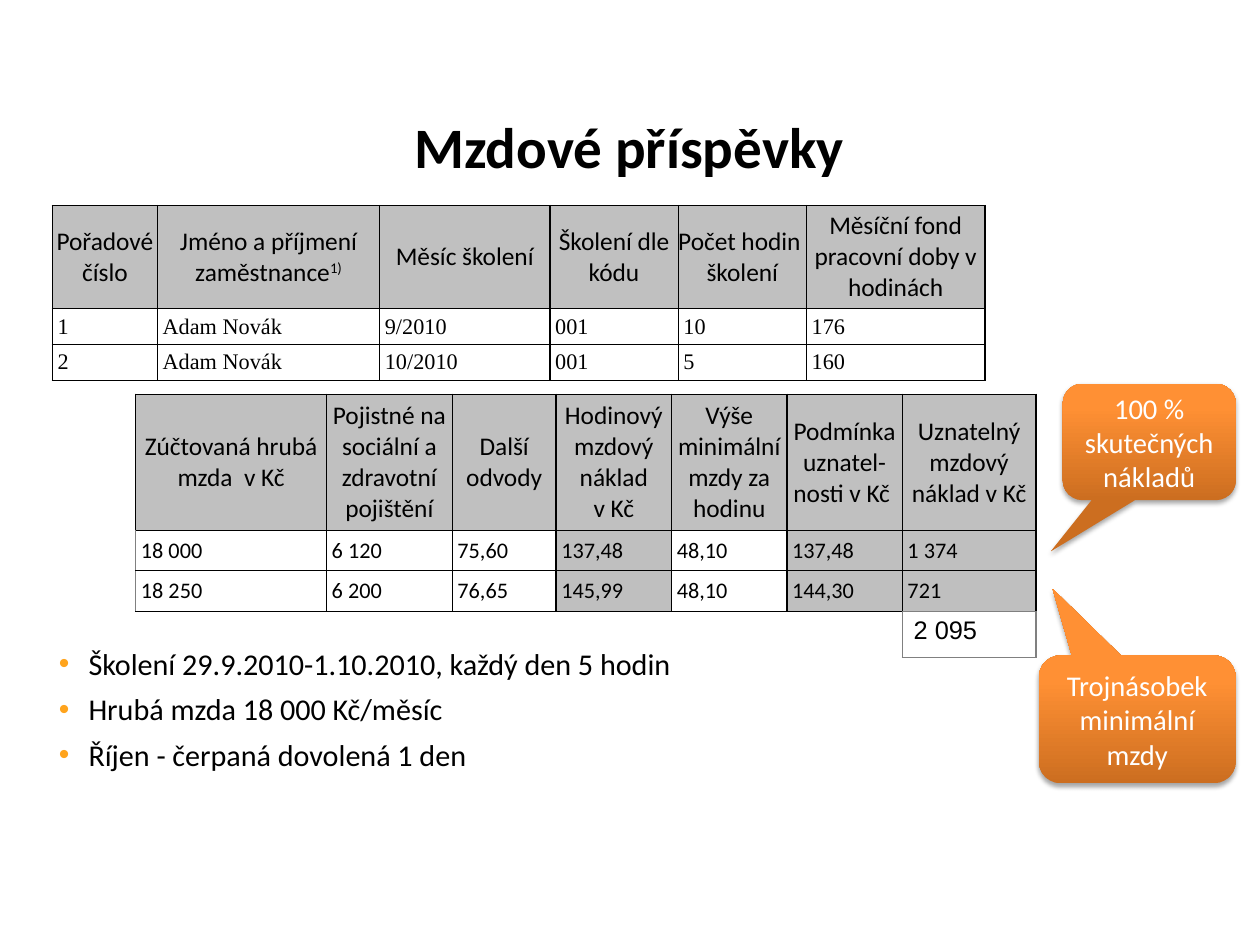
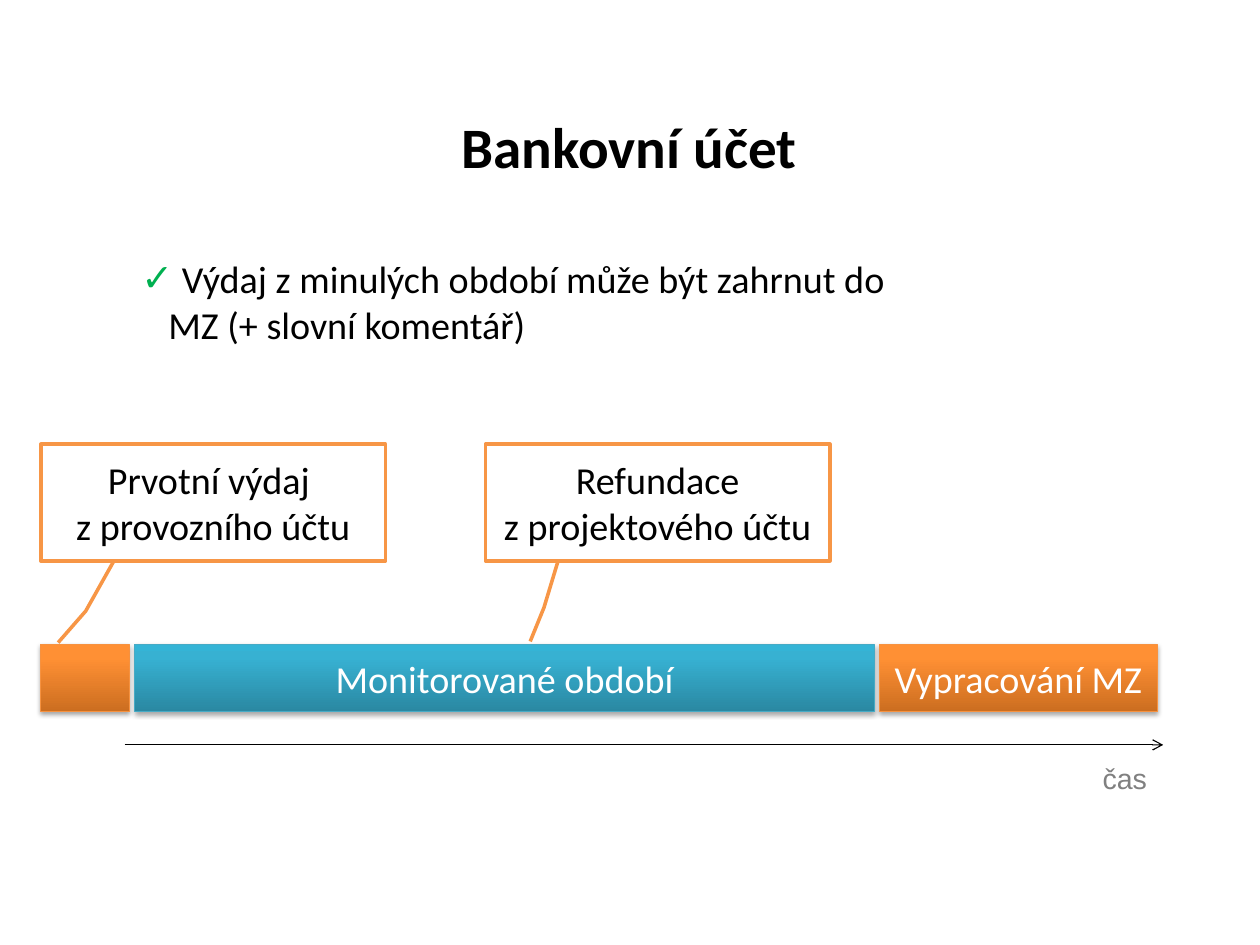
from copy import deepcopy
from lxml import etree
from pptx import Presentation
from pptx.dml.color import RGBColor
from pptx.enum.shapes import MSO_CONNECTOR, MSO_SHAPE
from pptx.enum.text import MSO_ANCHOR as ANCHOR, PP_ALIGN as ALIGN
from pptx.oxml.ns import qn
from pptx.util import Pt

BLACK = RGBColor(0x00, 0x00, 0x00)
WHITE = RGBColor(0xFF, 0xFF, 0xFF)
GRAY = RGBColor(0x80, 0x80, 0x80)
HEAD_GRAY = RGBColor(0xC0, 0xC0, 0xC0)
CELL_GRAY = RGBColor(0xBF, 0xBF, 0xBF)
AMBER = RGBColor(0xFF, 0xA4, 0x1D)
GREEN = RGBColor(0x00, 0xB0, 0x50)
ORANGE = RGBColor(0xF7, 0x96, 0x46)
ORANGE_EDGE = RGBColor(0xF6, 0x92, 0x40)
TEAL_EDGE = RGBColor(0x46, 0xAA, 0xC5)
ORANGE_GLOSS = [RGBColor(0xCC, 0x6E, 0x20), RGBColor(0xFF, 0x90, 0x34), RGBColor(0xFF, 0x91, 0x36)]
TEAL_GLOSS = [RGBColor(0x2A, 0x88, 0xA2), RGBColor(0x37, 0xB1, 0xD2), RGBColor(0x34, 0xB4, 0xD6)]


def write(frame, lines, size, color=BLACK, font="Calibri", align=ALIGN.LEFT,
          bold=False, after=0, bullet=None):
    frame.word_wrap = True
    look = {"size": Pt(size), "name": font, "bold": bold}
    for index, line in enumerate(lines):
        para = frame.paragraphs[0] if index == 0 else frame.add_paragraph()
        para.text = line
        if bullet:
            symbol, tint, margin, hang = bullet
            props = para._p.get_or_add_pPr()
            props.set("marL", str(Pt(margin)))
            props.set("indent", str(-Pt(hang)))
            paint = etree.SubElement(props, qn("a:buClr"))
            etree.SubElement(paint, qn("a:srgbClr"), val=str(tint))
            etree.SubElement(props, qn("a:buFont"), typeface="Arial")
            etree.SubElement(props, qn("a:buChar"), char=symbol)
        para.alignment = align
        para.space_after = Pt(after)
        for span in para.runs:
            for name, value in look.items():
                setattr(span.font, name, value)
            span.font.color.rgb = color


def gloss(shape, colors):
    shape.fill.gradient()
    shape.fill.gradient_angle = 90
    props = shape._element.spPr
    stops = props.find(qn("a:gradFill")).find(qn("a:gsLst"))
    stops.append(deepcopy(stops[-1]))
    for stop, color, place in zip(shape.fill.gradient_stops, colors, (0, 0.8, 1)):
        stop.color.rgb = color
        stop.position = place
    shape.shadow.inherit = False
    shade = etree.SubElement(props.find(qn("a:effectLst")), qn("a:outerShdw"),
                             blurRad=str(Pt(3.1)), dist=str(Pt(1.8)),
                             dir="5400000", rotWithShape="0")
    tint = etree.SubElement(shade, qn("a:srgbClr"), val=str(BLACK))
    etree.SubElement(tint, qn("a:alpha"), val="35000")


deck = Presentation()
deck.slide_width = Pt(793.75)
deck.slide_height = Pt(595.25)

pages = []
for title in ("Mzdové příspěvky", "Bankovní účet"):
    page = deck.slides.add_slide(deck.slide_layouts[6])
    box = page.shapes.add_textbox(Pt(53.8), Pt(66.7), Pt(685), Pt(72))
    write(box.text_frame, [title], 36, align=ALIGN.CENTER, bold=True)
    pages.append(page)
wages, account = pages

HEADING = {"size": 16, "align": ALIGN.CENTER}
tables = [
    {"at": (33, 129.4), "widths": [66.2, 140, 107.3, 80.8, 80.8, 112.4],
     "heights": [65, 22.6, 22.6],
     "line": BLACK, "edge": BLACK, "fill": HEAD_GRAY, "gray": (), "pad": (0, 0),
     "anchor": ANCHOR.MIDDLE, "head": HEADING,
     "body": {"size": 14, "font": "Times New Roman"},
     "rows": [["Pořadové číslo", "Jméno a příjmení zaměstnance", "Měsíc školení",
               "Školení dle kódu", "Počet hodin  školení",
               "Měsíční fond pracovní doby v hodinách"],
              ["1", "Adam Novák", "9/2010", "001", "10", "176"],
              ["2", "Adam Novák", "10/2010", "001", "5", "160"]]},
    {"at": (85.5, 248.4), "widths": [120.2, 79.2, 65.5, 72.7, 72.7, 72.7, 84.2],
     "heights": [85.7, 25.5, 25.5],
     "line": BLACK, "edge": GRAY, "fill": HEAD_GRAY, "gray": (3, 5, 6), "pad": (0, 0),
     "anchor": ANCHOR.MIDDLE, "head": HEADING, "body": {"size": 14},
     "rows": [["Zúčtovaná hrubá mzda  v Kč", "Pojistné na sociální a zdravotní pojištění",
               "Další odvody", "Hodinový mzdový náklad\vv Kč",
               "Výše minimální mzdy za hodinu", "Podmínka uznatel-\vnosti v Kč ",
               "Uznatelný mzdový náklad v Kč"],
              ["18 000", "6 120", "75,60", "137,48", "48,10", "137,48", "1 374"],
              ["18 250", "6 200", "76,65", "145,99", "48,10", "144,30", "721"]]},
    {"at": (568.4, 385), "widths": [84.2], "heights": [29.3],
     "line": GRAY, "edge": GRAY, "fill": WHITE, "gray": (), "pad": (7.2, 3.6),
     "anchor": ANCHOR.TOP, "head": {"size": 16, "font": "Arial"},
     "body": {}, "rows": [["2 095"]]},
]
grids = []
for plan in tables:
    left, top = plan["at"]
    widths, heights = plan["widths"], plan["heights"]
    grid = wages.shapes.add_table(len(heights), len(widths), Pt(left), Pt(top),
                                  Pt(sum(widths)), Pt(sum(heights))).table
    grid.first_row = grid.horz_banding = False
    for column, width in zip(grid.columns, widths):
        column.width = Pt(width)
    for r, texts in enumerate(plan["rows"]):
        grid.rows[r].height = Pt(heights[r])
        for c, text in enumerate(texts):
            cell = grid.cell(r, c)
            side, upright = plan["pad"]
            margins = {"left": 3.3 if r else side, "right": side,
                       "top": upright, "bottom": upright}
            for name, value in margins.items():
                setattr(cell, "margin_" + name, Pt(value))
            cell.vertical_anchor = plan["anchor"]
            write(cell.text_frame, [text], **plan["body" if r else "head"])
            cell.fill.solid()
            body_fill = CELL_GRAY if c in plan["gray"] else WHITE
            cell.fill.fore_color.rgb = body_fill if r else plan["fill"]
            borders = {"lnL": (plan["edge"] if r and c == 0 else plan["line"], 1),
                       "lnR": (plan["line"], 1),
                       "lnT": (plan["line"], 0.5 if r > 1 else 1),
                       "lnB": (plan["line"], 0.5 if r else 1)}
            props = cell._tc.get_or_add_tcPr()
            for place, (tag, (color, weight)) in enumerate(borders.items()):
                border = etree.Element(qn("a:" + tag), w=str(Pt(weight)))
                paint = etree.SubElement(border, qn("a:solidFill"))
                etree.SubElement(paint, qn("a:srgbClr"), val=str(color))
                props.insert(place, border)
    grids.append(grid)

name_para = grids[0].cell(0, 1).text_frame.paragraphs[0]
span = name_para.add_run()
span.text = "1)"
span.font.size, span.font.name, span.font.color.rgb = Pt(16), "Calibri", BLACK
span.font._element.set("baseline", "30000")

box = wages.shapes.add_textbox(Pt(0), Pt(402), Pt(775), Pt(164))
box.text_frame.margin_left = Pt(2.5)
box.text_frame.margin_top = Pt(4.3)
write(box.text_frame,
      ["Školení 29.9.2010-1.10.2010, každý den 5 hodin",
       "Hrubá mzda 18 000 Kč/měsíc",
       "Říjen - čerpaná dovolená 1 den"],
      19, after=6, bullet=("•", AMBER, 53.3, 18.7))

for text, place, adjust in (
        ("100 % skutečných nákladů", (669.5, 241.7, 109, 73.4), (-0.57, 0.94, 0.17)),
        ("Trojnásobek minimální mzdy", (654.5, 412.8, 124, 80.6), (-0.43, -1.02, 0.17))):
    callout = wages.shapes.add_shape(MSO_SHAPE.ROUNDED_RECTANGULAR_CALLOUT, *map(Pt, place))
    for index, value in enumerate(adjust):
        callout.adjustments[index] = value
    gloss(callout, ORANGE_GLOSS)
    callout.line.fill.background()
    callout.text_frame.vertical_anchor = ANCHOR.MIDDLE
    write(callout.text_frame, [text], 18, WHITE, align=ALIGN.CENTER)

box = account.shapes.add_textbox(Pt(82), Pt(157.3), Pt(490), Pt(65.5))
write(box.text_frame, [" Výdaj z minulých období může být zahrnut do MZ (+ slovní komentář)"],
      24, bullet=("✓", GREEN, 17, 17))

for text, left, adjust in (
        ("Prvotní výdaj \vz provozního účtu", 25.8, (1.01, 0.21, 1.43, 0.13, 1.7, 0.05)),
        ("Refundace\vz projektového účtu", 305.8, (1.01, 0.21, 1.4, 0.17, 1.69, 0.13))):
    callout = account.shapes.add_shape(MSO_SHAPE.LINE_CALLOUT_2, Pt(left), Pt(279.8),
                                       Pt(217), Pt(73.5))
    for index, value in enumerate(adjust):
        callout.adjustments[index] = value
    callout.shadow.inherit = False
    callout.fill.solid()
    callout.fill.fore_color.rgb = WHITE
    callout.line.color.rgb = ORANGE
    callout.line.width = Pt(2.25)
    callout.text_frame.vertical_anchor = ANCHOR.MIDDLE
    write(callout.text_frame, [text], 24, align=ALIGN.CENTER)

left = 25.6
for text, width, colors, edge in (
        ("", 56, ORANGE_GLOSS, ORANGE_EDGE),
        ("Monitorované období", 466, TEAL_GLOSS, TEAL_EDGE),
        ("Vypracování MZ", 175, ORANGE_GLOSS, ORANGE_EDGE)):
    phase = account.shapes.add_shape(MSO_SHAPE.RECTANGLE, Pt(left), Pt(406), Pt(width), Pt(42))
    gloss(phase, colors)
    phase.line.color.rgb = edge
    phase.line.width = Pt(0.75)
    if text:
        phase.text_frame.vertical_anchor = ANCHOR.MIDDLE
        write(phase.text_frame, [text], 24, WHITE, align=ALIGN.CENTER)
    left += width + 3.25

axis = account.shapes.add_connector(MSO_CONNECTOR.STRAIGHT, Pt(78.5), Pt(469.2), Pt(732.8), Pt(469.2))
axis.line.color.rgb = BLACK
axis.line.width = Pt(0.75)
etree.SubElement(axis.line._get_or_add_ln(), qn("a:tailEnd"), type="arrow")
etree.SubElement(axis._element.spPr, qn("a:effectLst"))

box = account.shapes.add_textbox(Pt(687.5), Pt(475.7), Pt(60), Pt(29))
write(box.text_frame, ["čas"], 18, GRAY, "Arial")

deck.save("out.pptx")
